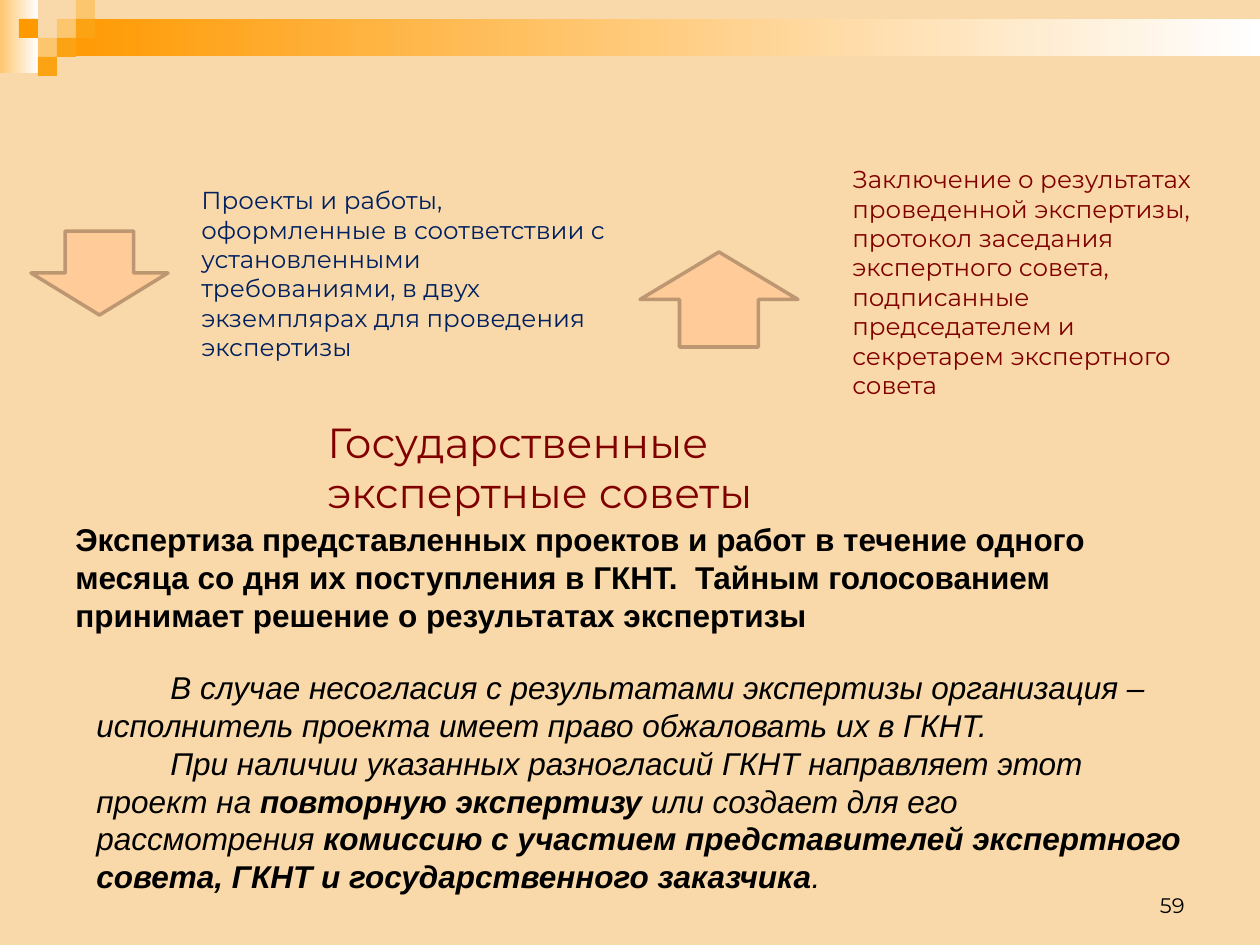
from pptx import Presentation
from pptx.dml.color import RGBColor
from pptx.enum.shapes import MSO_SHAPE
from pptx.enum.text import MSO_ANCHOR, PP_ALIGN
from pptx.util import Pt

EMU_PER_PX = 914400 / 126
TILE = 19

COLORS = {
    "background": "F9D9A9",
    "orange": "FF9900",
    "amber": "FBA313",
    "sand": "FCC66E",
    "white": "FFFFFF",
    "arrow": "FFCC99",
    "arrow_line": "BD9771",
    "black": "000000",
    "navy": "002060",
    "maroon": "800000",
}


def px(value):
    return round(value * EMU_PER_PX)


def color(name):
    return RGBColor.from_string(COLORS[name])


class SlideBuilder:
    def __init__(self, slide):
        self.slide = slide
        background = slide.background.fill
        background.solid()
        background.fore_color.rgb = color("background")

    def shape(self, kind, box, fill, line=None):
        shape = self.slide.shapes.add_shape(kind, *map(px, box))
        shape.shadow.inherit = False
        shape.fill.solid()
        shape.fill.fore_color.rgb = color(fill)
        if line:
            shape.line.color.rgb = color(line)
            shape.line.width = Pt(2)
        else:
            shape.line.fill.background()
        return shape

    def gradient(self, box, start, end):
        fill = self.shape(MSO_SHAPE.RECTANGLE, box, start).fill
        fill.gradient()
        fill.gradient_angle = 0
        for stop, name, position in zip(fill.gradient_stops, (start, end), (0, 1)):
            stop.color.rgb = color(name)
            stop.position = position

    def text(self, box, paragraphs, size, font="Montserrat", ink="black",
             italic=False, align=PP_ALIGN.LEFT, anchor=MSO_ANCHOR.TOP,
             before=0, indent=0):
        """Each paragraph is a list of (text, bold) runs."""
        text_frame = self.slide.shapes.add_textbox(*map(px, box)).text_frame
        text_frame.word_wrap = True
        text_frame.vertical_anchor = anchor
        for index, runs in enumerate(paragraphs):
            paragraph = text_frame.add_paragraph() if index else text_frame.paragraphs[0]
            paragraph.alignment = align
            paragraph.space_before = Pt(before)
            if indent:
                properties = paragraph._p.get_or_add_pPr()
                properties.set("marL", "0")
                properties.set("indent", str(px(indent)))
            for content, bold in runs:
                run = paragraph.add_run()
                run.text = content
                run.font.name = font
                run.font.size = Pt(size)
                run.font.bold = bold
                run.font.italic = italic
                run.font.color.rgb = color(ink)


def main():
    presentation = Presentation()
    presentation.slide_width, presentation.slide_height = px(1260), px(945)
    builder = SlideBuilder(presentation.slides.add_slide(presentation.slide_layouts[6]))

    # Header band and its mosaic of (column, row) tiles
    builder.gradient((0, 0, 38, 73), "sand", "white")
    builder.gradient((57, 19, 1203, 37), "orange", "white")
    tiles = [(3, 1, "sand"), (4, 0, "sand"), (4, 1, "amber"), (2, 2, "sand"),
             (1, 1, "orange"), (3, 2, "amber"), (2, 3, "amber")]
    for column, row, fill in tiles:
        builder.shape(MSO_SHAPE.RECTANGLE,
                      (column * TILE, row * TILE, TILE, TILE), fill)

    # What the councils receive and what they return
    builder.shape(MSO_SHAPE.DOWN_ARROW, (31, 231, 137, 84), "arrow", "arrow_line")
    builder.text((189, 179, 441, 220), [[(
        "Проекты и работы, оформленные в соответствии с установленными "
        "требованиями, в двух экземплярах для проведения экспертизы", False)]],
        14, ink="navy")
    builder.shape(MSO_SHAPE.UP_ARROW, (640, 252, 158, 95), "arrow", "arrow_line")
    builder.text((840, 158, 368, 280), [[(
        "Заключение о результатах проведенной экспертизы, протокол заседания "
        "экспертного совета, подписанные председателем и секретарем "
        "экспертного совета", False)]], 14, ink="maroon")

    # Expert councils and their task
    builder.text((315, 410, 518, 115),
                 [[("Государственные", False)], [("экспертные советы", False)]],
                 24, ink="maroon")
    builder.text((63, 514, 1134, 116), [[(
        "Экспертиза представленных проектов и работ в течение одного месяца "
        "со дня их поступления в ГКНТ.  Тайным голосованием принимает решение "
        "о результатах экспертизы", True)]], 18, font="Arial", before=3.6)

    # Appeal procedure
    builder.text((84, 662, 1113, 242), [
        [("В случае несогласия с результатами экспертизы организация – "
          "исполнитель проекта имеет право обжаловать их в ГКНТ.", False)],
        [("При наличии указанных разногласий ГКНТ направляет этот проект на ", False),
         ("повторную экспертизу ", True),
         ("или создает для его рассмотрения ", False),
         ("комиссию с участием представителей экспертного совета, ГКНТ и "
          "государственного заказчика", True),
         (".", False)],
    ], 18, font="Arial", italic=True, indent=74)

    # Page number
    builder.text((903, 861, 294, 63), [[("59", False)]], 12,
                 align=PP_ALIGN.RIGHT, anchor=MSO_ANCHOR.BOTTOM)

    presentation.save("out.pptx")


if __name__ == "__main__":
    main()
